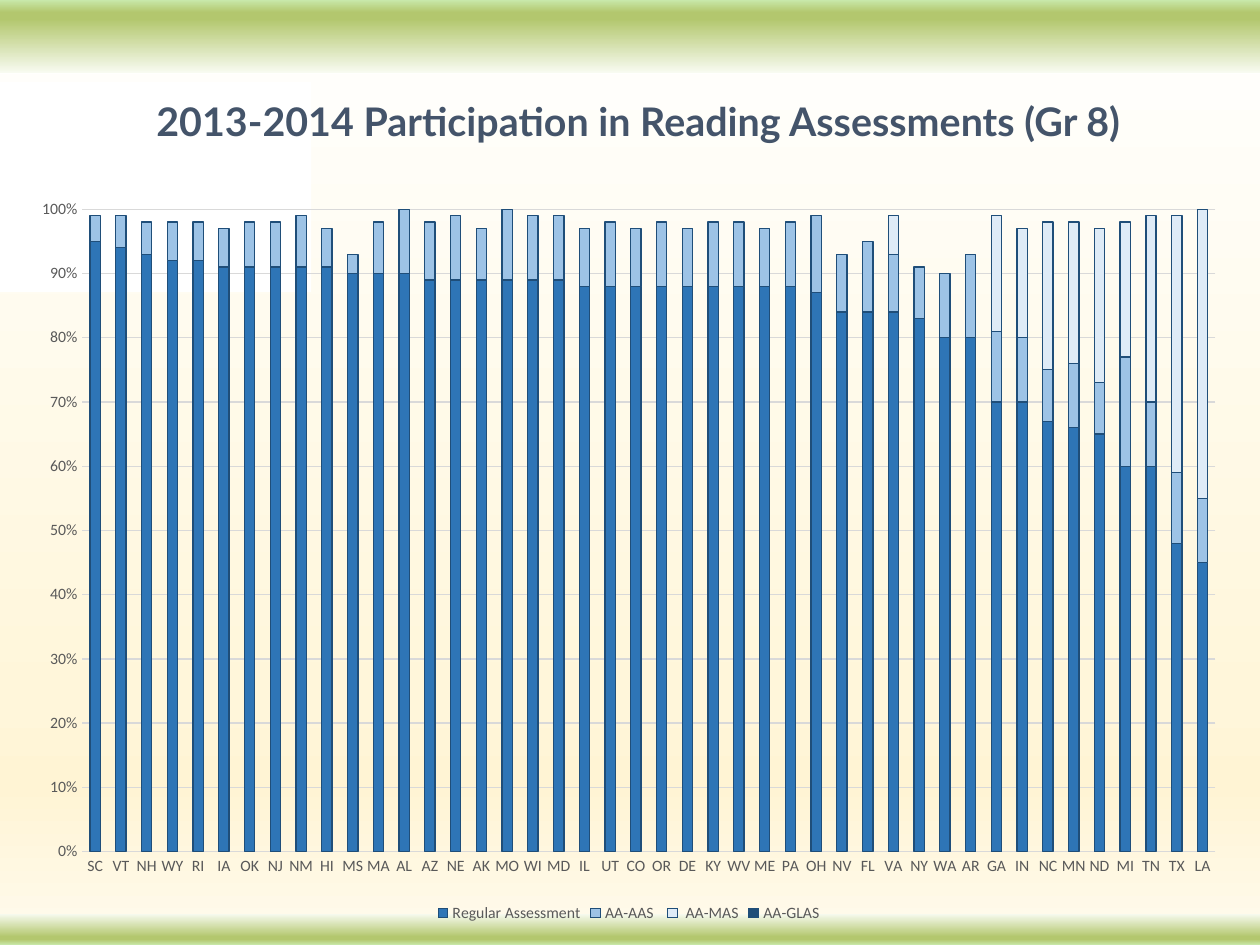
from dataclasses import dataclass

from lxml.etree import SubElement
from pptx import Presentation
from pptx.chart.data import CategoryChartData
from pptx.dml.color import RGBColor
from pptx.enum.chart import XL_CHART_TYPE, XL_LEGEND_POSITION, XL_TICK_MARK
from pptx.enum.shapes import MSO_SHAPE
from pptx.enum.text import MSO_ANCHOR, PP_ALIGN
from pptx.oxml.ns import qn
from pptx.util import Inches, Pt


@dataclass(frozen=True)
class Theme:
    """Colours, fonts and type sizes of the deck."""
    title_font: str = "Lato"
    chart_font: str = "Calibri"
    title_size: float = 22.5
    chart_size: float = 10
    label_size: float = 9
    line_width: float = 0.75
    title: str = "44546A"
    label: str = "595959"
    grid: str = "D9D9D9"
    outline: str = "1F4E79"
    panel: str = "FFFFFF"
    series: tuple = ("2E75B6", "9DC3E6", "DEEBF7", "1F4E79")
    page_stops: tuple = ((0, "FFFFFF"), (74, "FFF6DA"), (83, "FFF4D4"), (100, "FFFBEE"))
    band_stops: tuple = ((0, "F8FBF1"), (74, "B3C76E"), (83, "B3C76E"), (100, "C8E8AA"))


THEME = Theme()

STATES = (
    "SC VT NH WY RI IA OK NJ NM HI MS MA AL AZ NE AK MO WI MD IL UT CO "
    "OR DE KY WV ME PA OH NV FL VA NY WA AR GA IN NC MN ND MI TN TX LA"
).split()

PERCENTAGES = {
    "Regular Assessment": [
        95, 94, 93, 92, 92, 91, 91, 91, 91, 91, 90, 90, 90, 89, 89, 89, 89, 89, 89, 88, 88, 88,
        88, 88, 88, 88, 88, 88, 87, 84, 84, 84, 83, 80, 80, 70, 70, 67, 66, 65, 60, 60, 48, 45],
    "AA-AAS ": [
        4, 5, 5, 6, 6, 6, 7, 7, 8, 6, 3, 8, 10, 9, 10, 8, 11, 10, 10, 9, 10, 9,
        10, 9, 10, 10, 9, 10, 12, 9, 11, 9, 8, 10, 13, 11, 10, 8, 10, 8, 17, 10, 11, 10],
    " AA-MAS": [0] * 31 + [6, 0, 0, 0, 18, 17, 23, 22, 24, 21, 29, 40, 45],
    "AA-GLAS": [0] * len(STATES),
}


def color(code):
    """Return the colour for a hex code."""
    return RGBColor.from_string(code)


def fill_gradient(fill, element, stops, angle):
    """Give a fill a linear gradient turned clockwise by the angle."""
    fill.gradient()
    fill.gradient_angle = 360 - angle
    stop_list = next(element.iter(qn("a:gsLst")))
    for stop in list(stop_list):
        stop_list.remove(stop)
    for position, code in stops:
        stop = SubElement(stop_list, qn("a:gs"), pos=str(position * 1000))
        SubElement(stop, qn("a:srgbClr"), val=code)


def add_panel(page, left, top, width, height):
    """Add a rectangle without outline or shadow."""
    panel = page.shapes.add_shape(MSO_SHAPE.RECTANGLE, left, top, width, height)
    panel.shadow.inherit = False
    panel.line.fill.background()
    return panel


def add_backdrop(page, width, height):
    """Paint the page, its two edge bands and the white corner."""
    fill_gradient(page.background.fill, page.element, THEME.page_stops, 90)
    top_height, bottom_height = Inches(0.58), Inches(0.25)
    for top, band_height, angle in (
        (0, top_height, 270),
        (height - bottom_height, bottom_height, 90),
    ):
        band = add_panel(page, 0, top, width, band_height)
        fill_gradient(band.fill, band.element, THEME.band_stops, angle)
    corner = add_panel(page, 0, Inches(0.65), Inches(2.47), Inches(1.67))
    corner.fill.solid()
    corner.fill.fore_color.rgb = color(THEME.panel)


def add_title(page, left, top, width, height, text):
    """Add the centred slide title."""
    box = page.shapes.add_textbox(left, top, width, height)
    frame = box.text_frame
    frame.word_wrap = True
    frame.vertical_anchor = MSO_ANCHOR.MIDDLE
    frame.text = text
    para = frame.paragraphs[0]
    para.alignment = PP_ALIGN.CENTER
    font = para.runs[0].font
    font.name, font.size, font.bold = THEME.title_font, Pt(THEME.title_size), True
    font.color.rgb = color(THEME.title)


def style_labels(font):
    """Set the font of axis and legend labels."""
    font.name, font.size = THEME.chart_font, Pt(THEME.label_size)
    font.color.rgb = color(THEME.label)


def style_line(line, code):
    """Set a thin solid line."""
    line.width = Pt(THEME.line_width)
    line.color.rgb = color(code)


def style_axes(chart):
    """Format both axes and the gridlines."""
    for axis in (chart.category_axis, chart.value_axis):
        axis.major_tick_mark = axis.minor_tick_mark = XL_TICK_MARK.NONE
        style_labels(axis.tick_labels.font)
    style_line(chart.category_axis.format.line, THEME.grid)
    values = chart.value_axis
    values.minimum_scale, values.maximum_scale, values.major_unit = 0, 1, 0.1
    values.tick_labels.number_format = "0%"
    values.tick_labels.number_format_is_linked = False
    values.format.line.fill.background()
    style_line(values.major_gridlines.format.line, THEME.grid)


def add_participation_chart(page, left, top, width, height):
    """Add the stacked columns of participation by state."""
    data = CategoryChartData(number_format="0%")
    data.categories = STATES
    for name, percentages in PERCENTAGES.items():
        data.add_series(name, [value / 100 for value in percentages])
    chart = page.shapes.add_chart(
        XL_CHART_TYPE.COLUMN_STACKED, left, top, width, height, data
    ).chart
    chart.has_title = False
    chart.font.name, chart.font.size = THEME.chart_font, Pt(THEME.chart_size)
    style_axes(chart)
    plot = chart.plots[0]
    plot.gap_width, plot.overlap, plot.vary_by_categories = 150, 100, False
    for series, code in zip(plot.series, THEME.series):
        series.format.fill.solid()
        series.format.fill.fore_color.rgb = color(code)
        style_line(series.format.line, THEME.outline)
    chart.has_legend = True
    chart.legend.position = XL_LEGEND_POSITION.BOTTOM
    chart.legend.include_in_layout = False
    style_labels(chart.legend.font)


def main():
    """Build and save the deck."""
    deck = Presentation()
    deck.slide_width, deck.slide_height = Inches(10), Inches(7.5)
    page = deck.slides.add_slide(deck.slide_layouts[6])
    add_backdrop(page, deck.slide_width, deck.slide_height)
    add_title(page, Inches(0.14), Inches(0.65), Inches(9.86), Inches(0.61),
              "2013-2014 Participation in Reading Assessments (Gr 8)")
    add_participation_chart(page, Inches(0.14), Inches(1.47), Inches(9.7), Inches(5.89))
    deck.save("out.pptx")


if __name__ == "__main__":
    main()
